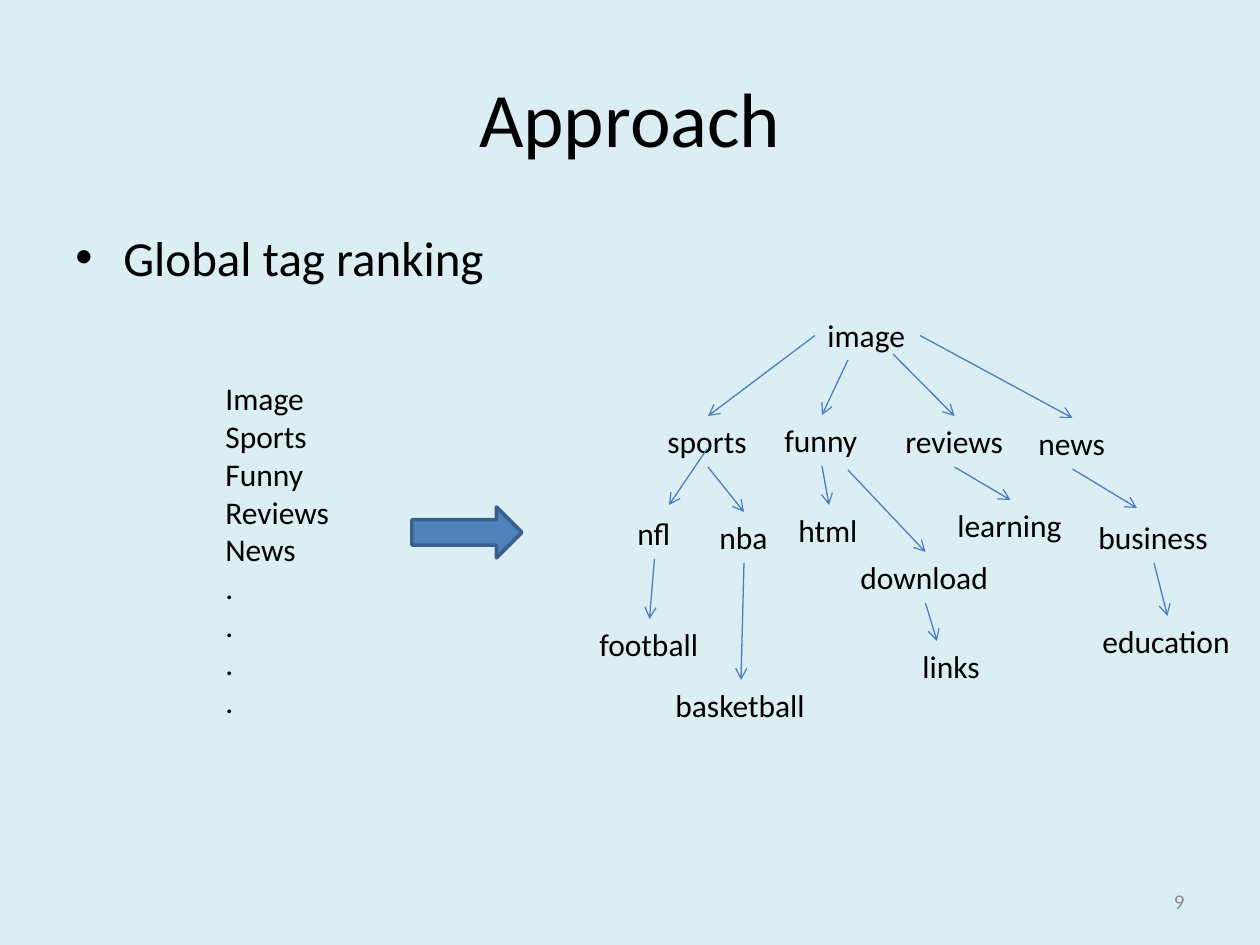
import pptx
import pptx.util
import pptx.dml.color
import pptx.enum.shapes
import pptx.enum.text
import lxml.etree
from pptx.oxml.ns import qn

PX = 914400 / 126
ALIGN = pptx.enum.text.PP_ALIGN
ANCHOR = pptx.enum.text.MSO_ANCHOR
SHAPE = pptx.enum.shapes.MSO_SHAPE
LINE = pptx.enum.shapes.MSO_CONNECTOR.STRAIGHT

prs = pptx.Presentation()
prs.slide_width = round(1260 * PX)
prs.slide_height = round(945 * PX)
slide = prs.slides.add_slide(prs.slide_layouts[6])


def paint(form, hue):
    """Set a fill, or the colour of a line or font, from a hex string."""
    if hasattr(form, "solid"):
        form.solid()
        form = form.fore_color
    else:
        form = form.color
    form.rgb = pptx.dml.color.RGBColor.from_string(hue)


def write(text, x, y, w, h, size=18, hue="000000", align=ALIGN.LEFT,
          anchor=ANCHOR.TOP, wrap=False):
    box = slide.shapes.add_textbox(*[round(v * PX) for v in (x, y, w, h)])
    frame = box.text_frame
    frame.word_wrap = wrap
    if not wrap:
        frame.auto_size = pptx.enum.text.MSO_AUTO_SIZE.SHAPE_TO_FIT_TEXT
    frame.vertical_anchor = anchor
    frame.text = text
    for par in frame.paragraphs:
        par.alignment = align
        for run in par.runs:
            run.font.name = "Calibri"
            run.font.size = pptx.util.Pt(size)
            paint(run.font, hue)
    return box


paint(slide.background.fill, "DBEEF4")

# Title, bullet and page number
write("Approach", 63, 38, 1134, 157, size=44, align=ALIGN.CENTER,
      anchor=ANCHOR.MIDDLE, wrap=True)
body = write("Global tag ranking", 63, 221, 1134, 624, size=28, wrap=True)
par = body.text_frame.paragraphs[0]
par.space_before = pptx.util.Pt(5.6)
props = par._p.get_or_add_pPr()
props.set("marL", str(round(48 * PX)))
props.set("indent", str(round(-48 * PX)))
lxml.etree.SubElement(props, qn("a:buFont"), typeface="Arial")
lxml.etree.SubElement(props, qn("a:buChar"), char="•")
write("9", 903, 876, 294, 50, size=12, hue="8C8C8C", align=ALIGN.RIGHT,
      anchor=ANCHOR.MIDDLE, wrap=True)

# Tag tree: left, top and width of each word
tags = {
    "image": (815, 310, 105),
    "sports": (655, 416, 106),
    "funny": (772, 415, 100),
    "reviews": (893, 416, 123),
    "news": (1026, 418, 93),
    "nfl": (625, 508, 59),
    "football": (587, 619, 125),
    "nba": (707, 512, 74),
    "basketball": (663, 680, 156),
    "html": (786, 505, 86),
    "download": (848, 552, 155),
    "links": (910, 641, 83),
    "learning": (945, 500, 131),
    "business": (1086, 512, 136),
    "education": (1090, 616, 155),
}
nodes = {tag: write(tag, *spot, 51) for tag, spot in tags.items()}

# Each end is a side of its word, or a free point
TOP, LEFT, BOTTOM, RIGHT = range(4)
links = [
    ("image", LEFT, "sports", TOP),
    ("image", (848, 360), "funny", TOP),
    ("image", (893, 354), "reviews", TOP),
    ("image", RIGHT, "news", TOP),
    ("sports", (707, 449), "nfl", (669, 505)),
    ("nfl", BOTTOM, "football", TOP),
    ("sports", BOTTOM, "nba", TOP),
    ("nba", BOTTOM, "basketball", TOP),
    ("funny", BOTTOM, "html", TOP),
    ("funny", (848, 470), "download", TOP),
    ("download", BOTTOM, "links", (937, 641)),
    ("reviews", BOTTOM, "learning", TOP),
    ("news", BOTTOM, "business", (1137, 508)),
    ("business", BOTTOM, "education", TOP),
]
for head, start, tail, end in links:
    free = [spot if isinstance(spot, tuple) else (0, 0) for spot in (start, end)]
    link = slide.shapes.add_connector(
        LINE, *[round(v * PX) for spot in free for v in spot])
    if isinstance(start, int):
        link.begin_connect(nodes[head], start)
    if isinstance(end, int):
        link.end_connect(nodes[tail], end)
    paint(link.line, "4B7EBC")
    link.line.width = pptx.util.Pt(0.75)
    lxml.etree.SubElement(link.line._get_or_add_ln(), qn("a:tailEnd"), type="arrow")
    lxml.etree.SubElement(link._element.spPr, qn("a:effectLst"))

# Ranked list and the arrow to the tree
ranks = ["Image", "Sports", "Funny", "Reviews", "News"] + ["."] * 4
write("\n".join(ranks), 213, 373, 130, 357)
arrow = slide.shapes.add_shape(
    SHAPE.RIGHT_ARROW, *[round(v * PX) for v in (412, 507, 110, 51)])
arrow.shadow.inherit = False
paint(arrow.fill, "4F81BD")
paint(arrow.line, "3A5F8C")
arrow.line.width = pptx.util.Pt(2)

prs.save("out.pptx")
